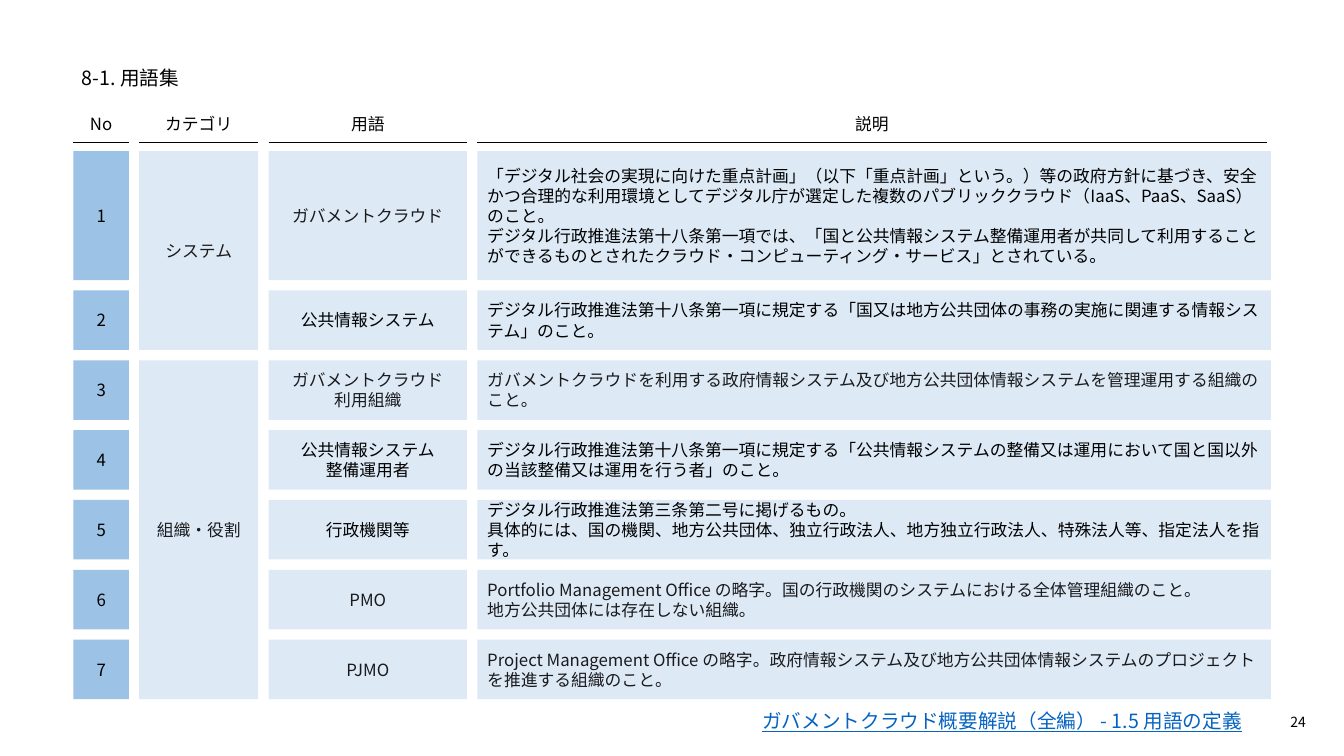
from dataclasses import dataclass
from itertools import accumulate

from lxml import etree
from pptx import Presentation
from pptx import util as u
from pptx.dml.color import RGBColor
from pptx.enum import shapes, text
from pptx.oxml.ns import qn


@dataclass(frozen=True)
class Theme:
    font: str = "Noto Sans CJK JP"
    black: str = "000000"
    ink: str = "1A1A1C"
    pale: str = "DDEAF6"
    blue: str = "9CC2E5"
    link: str = "0563C1"
    title: int = 14
    body: int = 12
    page: int = 10


LEFT, MID, RIGHT = text.PP_ALIGN.LEFT, text.PP_ALIGN.CENTER, text.PP_ALIGN.RIGHT
INSET = (0.25, 0.13, 0.25, 0.13)


class Board:
    def __init__(self, slide, theme):
        self.slide = slide
        self.theme = theme

    def fit(self, shape, words, size, color, align=MID, inset=INSET,
            anchor=text.MSO_ANCHOR.MIDDLE, line=False, para=None):
        frame = shape.text_frame
        sides = ("left", "top", "right", "bottom")
        form = {f"margin_{s}": u.Cm(v) for s, v in zip(sides, inset)}
        form |= {"word_wrap": True, "auto_size": text.MSO_AUTO_SIZE.NONE,
                 "vertical_anchor": anchor}
        for key, val in form.items():
            setattr(frame, key, val)
        frame.text = words
        look = {"name": self.theme.font, "size": u.Pt(size),
                "bold": False, "underline": line}
        for par in frame.paragraphs:
            for key, val in {"alignment": align, **(para or {})}.items():
                setattr(par, key, val)
            for run in par.runs:
                for key, val in look.items():
                    setattr(run.font, key, val)
                run.font.color.rgb = RGBColor.from_string(color)
                east = etree.SubElement(run.font._element, qn("a:ea"))
                east.set("typeface", self.theme.font)

    def title(self, words, *box):
        shape = self.slide.shapes.title
        for key, val in zip(("left", "top", "width", "height"), box):
            setattr(shape, key, u.Cm(val))
        self.fit(shape, words, self.theme.title, self.theme.black,
                 LEFT, (0, 0, 0, 0))

    def label(self, words, box, size, color, **form):
        shape = self.slide.shapes.add_textbox(*map(u.Cm, box))
        self.fit(shape, words, size, color, **form)

    def cell(self, words, box, fill, color, align=MID):
        shape = self.slide.shapes.add_shape(
            shapes.MSO_SHAPE.RECTANGLE, *map(u.Cm, box))
        shape.shadow.inherit = False
        shape.fill.solid()
        shape.fill.fore_color.rgb = RGBColor.from_string(fill)
        shape.line.fill.background()
        self.fit(shape, words, self.theme.body, color, align)

    def rule(self, x, y, wide):
        line = self.slide.shapes.add_connector(
            shapes.MSO_CONNECTOR.STRAIGHT, *map(u.Cm, (x, y, x + wide, y)))
        line.line.width = u.Pt(0.75)
        line.line.color.rgb = RGBColor.from_string(self.theme.black)
        etree.SubElement(line._element.spPr, qn("a:effectLst"))


T = Theme()
GAP = 0.26
HEADS = ("No", "カテゴリ", "用語", "説明")
WIDTHS = (1.4, 3, 5, 20)
HEIGHTS = (3.25,) + (1.5,) * 6
GROUPS = (("システム", 0, 1), ("組織・役割", 2, 6))
TERMS = (
    ("ガバメントクラウド", T.ink, T.black,
     "「デジタル社会の実現に向けた重点計画」（以下「重点計画」という。）等の政府方針に基づき、"
     "安全かつ合理的な利用環境としてデジタル庁が選定した複数のパブリッククラウド"
     "（IaaS、PaaS、SaaS）のこと。\n"
     "デジタル行政推進法第十八条第一項では、「国と公共情報システム整備運用者が共同して利用する"
     "ことができるものとされたクラウド・コンピューティング・サービス」とされている。"),
    ("公共情報システム", T.black, T.black,
     "デジタル行政推進法第十八条第一項に規定する「国又は地方公共団体の事務の実施に関連する"
     "情報システム」のこと。"),
    ("ガバメントクラウド\n利用組織", T.ink, T.ink,
     "ガバメントクラウドを利用する政府情報システム及び地方公共団体情報システムを"
     "管理運用する組織のこと。"),
    ("公共情報システム\n整備運用者", T.black, T.black,
     "デジタル行政推進法第十八条第一項に規定する「公共情報システムの整備又は運用において"
     "国と国以外の当該整備又は運用を行う者」のこと。"),
    ("行政機関等", T.black, T.black,
     "デジタル行政推進法第三条第二号に掲げるもの。\n"
     "具体的には、国の機関、地方公共団体、独立行政法人、地方独立行政法人、特殊法人等、"
     "指定法人を指す。"),
    ("PMO", T.ink, T.ink,
     "Portfolio Management Office の略字。国の行政機関のシステムにおける"
     "全体管理組織のこと。\v地方公共団体には存在しない組織。"),
    ("PJMO", T.ink, T.ink,
     "Project Management Office の略字。政府情報システム及び地方公共団体情報システムの"
     "プロジェクトを推進する組織のこと。"),
)


def starts(first, sizes):
    return list(accumulate((s + GAP for s in sizes[:-1]), initial=first))


def main():
    deck = Presentation()
    deck.slide_width, deck.slide_height = u.Cm(33.87), u.Cm(19.05)
    board = Board(deck.slides.add_slide(deck.slide_layouts[5]), T)
    board.title("8-1. 用語集", 2.06, 1.52, 29.77, 0.86)

    cols, rows = starts(1.85, WIDTHS), starts(3.81, HEIGHTS)
    for head, x, wide in zip(HEADS, cols, WIDTHS[:-1] + (19.89,)):
        board.label(head, (x, 2.74, wide, 0.76), T.body, T.black,
                    anchor=text.MSO_ANCHOR.TOP)
        board.rule(x, 3.58, wide)

    for name, top, end in GROUPS:
        tall = rows[end] + HEIGHTS[end] - rows[top]
        board.cell(name, (cols[1], rows[top], WIDTHS[1], tall), T.pale, T.ink)

    for num, (y, tall, term) in enumerate(zip(rows, HEIGHTS, TERMS), 1):
        name, shade, tone, note = term
        for col, words, fill, color, align in (
                (0, str(num), T.blue, T.black, MID),
                (2, name, T.pale, shade, MID),
                (3, note, T.pale, tone, LEFT)):
            board.cell(words, (cols[col], y, WIDTHS[col], tall),
                       fill, color, align)

    board.label("ガバメントクラウド概要解説（全編） - 1.5 用語の定義",
                (2.06, 17.68, 29.49, 1.02), T.title, T.link, align=RIGHT,
                inset=(0, 0.13, 0.25, 0.13), line=True,
                para={"line_spacing": 0.9, "space_before": u.Pt(10)})
    board.label("24", (31.67, 17.68, 1.24, 1.02), T.page, T.black,
                align=RIGHT, inset=(0.25, 0.13, 0, 0.13))
    deck.save("out.pptx")


if __name__ == "__main__":
    main()
